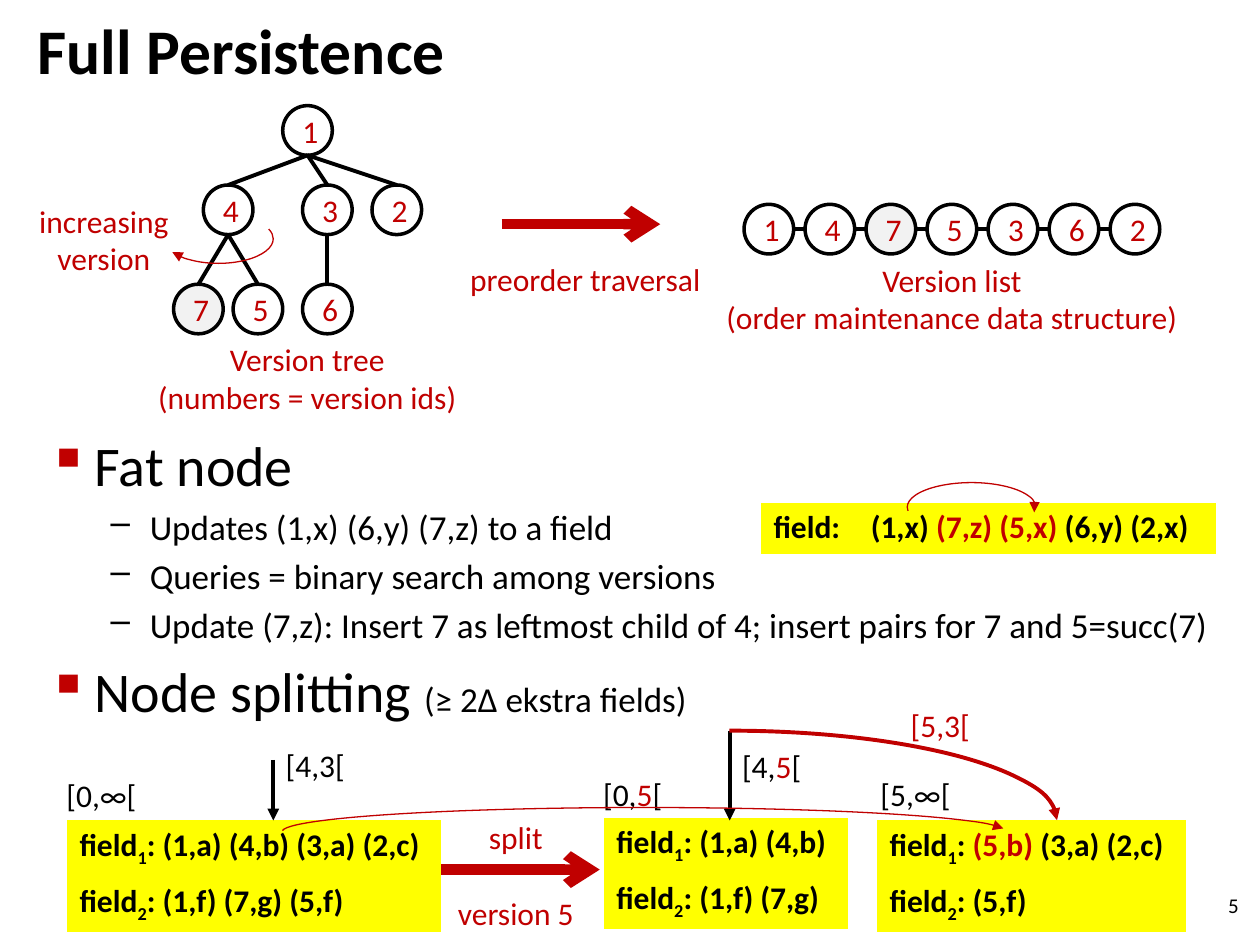
from lxml import etree
from pptx import Presentation
from pptx.dml.color import RGBColor
from pptx.enum import shapes, text
from pptx.oxml import ns
from pptx.util import Cm, Pt

RED = RGBColor(0xC0, 0x00, 0x00)
BLACK = RGBColor(0x00, 0x00, 0x00)
WHITE = RGBColor(0xFF, 0xFF, 0xFF)
GREY = RGBColor(0xF2, 0xF2, 0xF2)
YELLOW = RGBColor(0xFF, 0xFF, 0x00)
MID = text.PP_ALIGN.CENTER
LEFT = text.PP_ALIGN.LEFT
RIGHT = text.PP_ALIGN.RIGHT
PLAIN = "{2D5ABB26-0587-4C30-8999-92F81FD0307C}"


def write(para, words, size=18, tint=BLACK, bold=False, align=LEFT):
    """Fill a paragraph; |bars| enclose red words, _lines_ a subscript."""
    font = para.font
    font.name, font.size, font.bold = "Calibri", Pt(size), bold
    font.color.rgb = tint
    para.alignment = align
    for i, part in enumerate(words.split("|")):
        for j, piece in enumerate(part.split("_")):
            if not piece:
                continue
            run = para.add_run()
            run.text = piece
            if i % 2:
                run.font.color.rgb = RED
            if j % 2:
                run.font._element.set("baseline", "-25000")


def label(slide, x, y, w, h, lines, **style):
    """Add a wrapped text box with one paragraph per line."""
    frame = slide.shapes.add_textbox(Cm(x), Cm(y), Cm(w), Cm(h)).text_frame
    frame.word_wrap = True
    for i, words in enumerate(lines):
        para = frame.add_paragraph() if i else frame.paragraphs[0]
        write(para, words, **style)
    return frame


def stroke(shape, tint, width, tip=None):
    """Style a line and give its end an arrowhead."""
    shape.line.color.rgb = tint
    shape.line.width = Pt(width)
    if tip:
        line = shape.line._get_or_add_ln()
        etree.SubElement(line, ns.qn("a:tailEnd"), type=tip)


def link(slide, x, y, right, low, tint=BLACK, width=2.25, tip=None):
    """Draw a straight line between two points."""
    line = slide.shapes.add_connector(
        shapes.MSO_CONNECTOR.STRAIGHT, Cm(x), Cm(y), Cm(right), Cm(low))
    stroke(line, tint, width, tip)
    etree.SubElement(line._element.spPr, ns.qn("a:effectLst"))


def arc(slide, x, y, w, h, start, stop, width=0.75, flip=False):
    """Draw a red arc with an arrowhead between two angles in degrees."""
    bow = slide.shapes.add_shape(
        shapes.MSO_SHAPE.ARC, Cm(x), Cm(y), Cm(w), Cm(h))
    bow.adjustments[0], bow.adjustments[1] = start * 0.6, stop * 0.6
    bow.fill.background()
    stroke(bow, RED, width, "triangle")
    bow.shadow.inherit = False
    if flip:
        for side in ("flipH", "flipV"):
            bow._element.spPr.xfrm.set(side, "1")


def node(slide, x, y, name):
    """Draw a round version node; version 7 is the new one."""
    disc = slide.shapes.add_shape(
        shapes.MSO_SHAPE.OVAL, Cm(x), Cm(y), Cm(1), Cm(1))
    disc.fill.solid()
    disc.fill.fore_color.rgb = GREY if name == "7" else WHITE
    stroke(disc, BLACK, 2)
    disc.shadow.inherit = False
    disc.text_frame.vertical_anchor = text.MSO_ANCHOR.MIDDLE
    write(disc.text_frame.paragraphs[0], name, tint=RED, align=MID)


def grid(slide, x, y, widths, rows):
    """Add a yellow table of bold fields."""
    table = slide.shapes.add_table(
        len(rows), len(widths), Cm(x), Cm(y),
        Cm(sum(widths)), Cm(1.03 * len(rows))).table
    table.first_row = table.horz_banding = False
    table._tbl.tblPr.find(ns.qn("a:tableStyleId")).text = PLAIN
    for col, width in zip(table.columns, widths):
        col.width = Cm(width)
    for r, row in enumerate(rows):
        for c, words in enumerate(row):
            cell = table.cell(r, c)
            cell.fill.solid()
            cell.fill.fore_color.rgb = YELLOW
            write(cell.text_frame.paragraphs[0], words, bold=True)


def tree(slide, x, y):
    """Draw the version tree with its captions."""
    spots = {"1": (2.2, 0), "4": (0.6, 1.6), "3": (2.6, 1.6), "2": (4, 1.6),
             "6": (2.6, 3.6), "5": (1.2, 3.6), "7": (0, 3.6)}
    for name, (dx, dy) in spots.items():
        node(slide, x + dx, y + dy, name)
    for top, kid in ("14", "13", "12", "47", "45", "36"):
        (ax, ay), (bx, by) = spots[top], spots[kid]
        link(slide, x + ax + 0.5, y + ay + 1, x + bx + 0.5, y + by)
    label(slide, x - 0.81, y + 4.6, 7.01, 1.8,
          ["Version tree", "(numbers = version ids)"], tint=RED, align=MID)
    arc(slide, x - 0.2, y + 2.19, 2.21, 0.99, 349.02, 163.99)
    label(slide, x - 3.6, y + 1.81, 4.39, 1.8, ["increasing version"],
          tint=RED, align=MID)


def walk(slide, x, y):
    """Draw the traversal arrow and its caption."""
    link(slide, x, y, x + 3.2, y, RED, 6, "arrow")
    label(slide, x - 2.21, y + 0.59, 7.8, 1.02, ["preorder traversal"],
          tint=RED, align=MID)


def chain(slide, x, y):
    """Draw the version list in traversal order."""
    step = 1.23
    for i, name in enumerate("1475362"):
        left = x + i * step
        node(slide, left, y, name)
        if i:
            link(slide, left - step + 1, y + 0.5, left, y + 0.5)
    label(slide, x - 1.31, y + 1.01, 11, 1.8,
          ["Version list", "(order maintenance data structure)"],
          tint=RED, align=MID)


def body(slide, x, y):
    """Write the two-level bullet list."""
    lines = ["Fat node", "Updates (1,x) (6,y) (7,z) to a field",
             "Queries = binary search among versions",
             "Update (7,z): Insert 7 as leftmost child of 4; "
             "insert pairs for 7 and 5=succ(7)", "Node splitting "]
    frame = label(slide, x, y, 24.69, 12.57, lines, size=20)
    for i, para in enumerate(frame.paragraphs):
        head = i in (0, 4)
        para.font.size = Pt(32 if head else 20)
        para.space_before = Pt(6.4 if head else 4)
        para.level = 0 if head else 1
        props = para._p.get_or_add_pPr()
        props.set("marL", str(Cm(0.95 if head else 2.06)))
        props.set("indent", str(-Cm(0.95 if head else 0.79)))
        mark = etree.Element(ns.qn("a:buChar"), char="▪" if head else "–")
        props.find(ns.qn("a:defRPr")).addprevious(mark)
        if head:
            hue = etree.Element(ns.qn("a:buClr"))
            etree.SubElement(hue, ns.qn("a:srgbClr"), val=str(RED))
            mark.addprevious(hue)
    note = frame.paragraphs[4].add_run()
    note.text = "(≥ 2Δ ekstra fields)"
    note.font.size = Pt(20)


def fat(slide, x, y):
    """Draw the fat node field with its copy arrow."""
    grid(slide, x, y, [1.96, 7.21],
         [["field:", "(1,x)| (7,z) (5,x)| (6,y) (2,x)"]])
    arc(slide, x + 2.95, y - 0.4, 2.59, 0.99, 356.62, 184.73, flip=True)


def split(slide, x, y):
    """Draw a node before and after it is split."""
    for dx, dy, width, one, two in (
            (0, 2.54, 7.54, "(1,a) (4,b) (3,a) (2,c)", "(1,f) (7,g) (5,f)"),
            (10.82, 2.48, 4.93, "(1,a) (4,b)", "(1,f) (7,g)"),
            (16.33, 2.54, 6.22, "|(5,b)| (3,a) (2,c)", "(5,f)")):
        grid(slide, x + dx, y + dy, [width],
             [["field_1_: " + one], ["field_2_: " + two]])
    for dx, dy, words in (
            (-0.26, 1.52, "[0,∞["), (10.56, 1.49, "[0,|5|["),
            (16.15, 1.49, "[5,∞["), (4.16, 0.91, "[4,3["),
            (13.36, 0.94, "[4,|5|["), (16.76, 0.1, "|[5,3[|")):
        label(slide, x + dx, y + dy, 2.2, 1.02, [words])
    for dx, dy in (4.16, 1.32), (13.36, 0.73):
        link(slide, x + dx, y + dy, x + dx, y + 2.54, tip="triangle")
    link(slide, x + 7.54, y + 3.53, x + 10.74, y + 3.53, RED, 6, "arrow")
    frame = label(slide, x + 5.15, y + 2.36, 7.8, 2.57,
                  ["split", "version 5"], tint=RED, align=MID)
    frame.paragraphs[1].space_before = Pt(22)
    arc(slide, x + 6.75, y + 0.73, 13.21, 3.61, 270, 359.99, 2.25)
    arc(slide, x + 4.34, y + 2.28, 14.6, 0.97, 0.15, 179.5, flip=True)


def main():
    """Build the slide and save it."""
    deck = Presentation()
    deck.slide_width, deck.slide_height = Cm(25.4), Cm(19.05)
    slide = deck.slides.add_slide(deck.slide_layouts[6])
    title = label(slide, 0.51, 0.33, 22.86, 1.6, ["Full Persistence"],
                  size=36.3, bold=True)
    title.vertical_anchor = text.MSO_ANCHOR.MIDDLE
    title.paragraphs[0].line_spacing = 0.8
    body(slide, 0.71, 8.56)
    tree(slide, 3.5, 2.13)
    walk(slide, 10.11, 4.52)
    chain(slide, 15, 4.12)
    fat(slide, 15.34, 10.13)
    split(slide, 1.35, 14)
    page = label(slide, 19.3, 17.73, 5.92, 1.02, ["5"], size=12, align=RIGHT)
    page.vertical_anchor = text.MSO_ANCHOR.MIDDLE
    deck.save("out.pptx")


if __name__ == "__main__":
    main()
